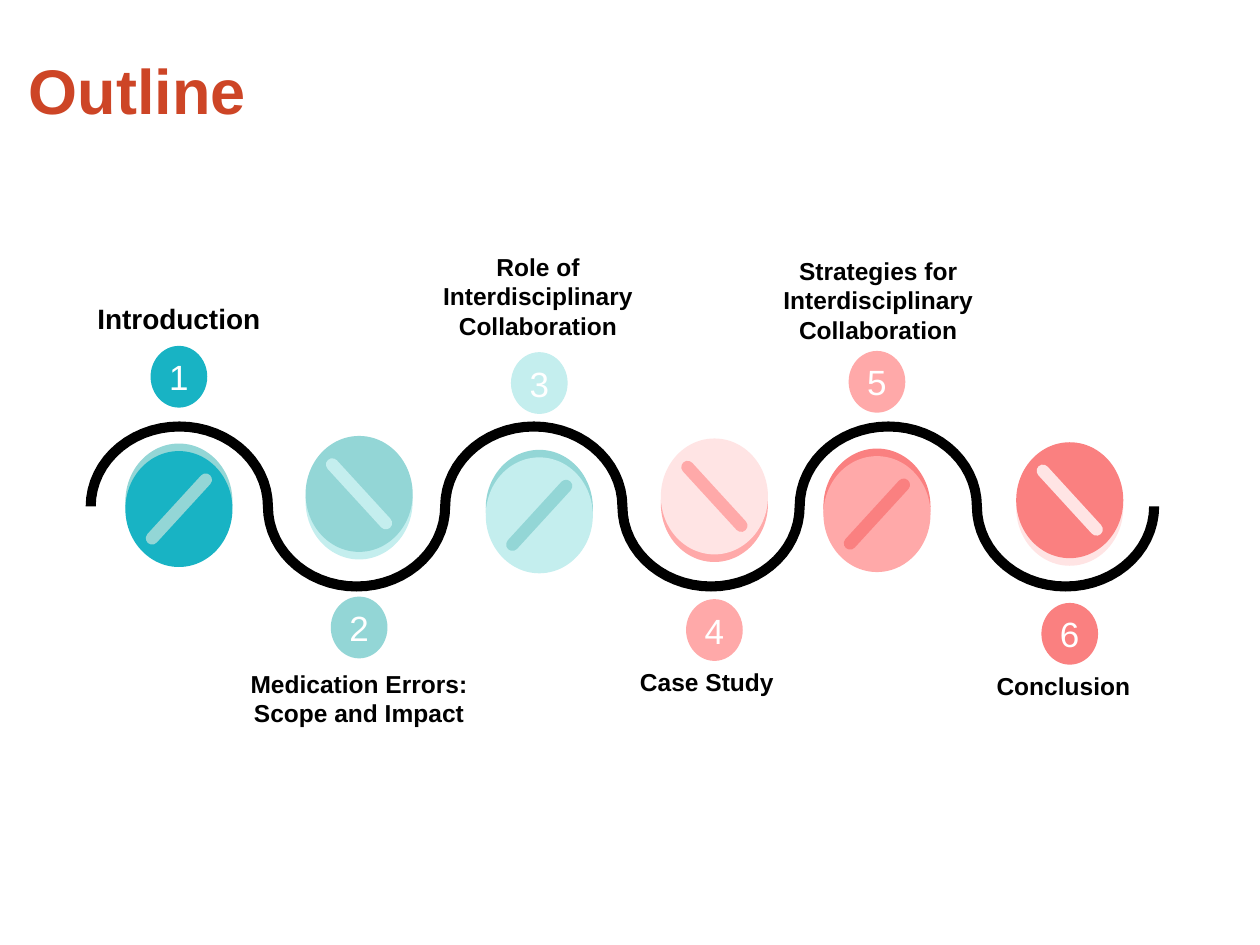
from math import cos, pi, sin

from pptx import Presentation
from pptx.dml.color import RGBColor
from pptx.enum.shapes import MSO_SHAPE
from pptx.enum.text import MSO_ANCHOR, MSO_AUTO_SIZE, PP_ALIGN
from pptx.util import Inches, Pt

COLORS = {
    "title": "CD4526",
    "black": "000000",
    "white": "FFFFFF",
    "teal": "18B3C4",
    "sea": "93D6D6",
    "mint": "C4EEEE",
    "pink": "FFA9A9",
    "blush": "FFE4E4",
    "coral": "FA8080",
}
PILL_WIDTH, PILL_HEIGHT = 0.85, 0.92
SCORE_LENGTH, SCORE_WIDTH, SCORE_ANGLE = 0.73, 0.1, 47.5
BADGE_WIDTH, BADGE_HEIGHT = 0.45, 0.49


def add_filled(kind, center_x, center_y, width, height, color):
    shape = slide.shapes.add_shape(
        kind, Inches(center_x - width / 2), Inches(center_y - height / 2),
        Inches(width), Inches(height))
    shape.shadow.inherit = False
    shape.fill.solid()
    shape.fill.fore_color.rgb = RGBColor.from_string(COLORS[color])
    shape.line.fill.background()
    return shape


def write_text(shape, text, size, color, bold, align, anchor, inset):
    text_frame = shape.text_frame
    text_frame.text = text
    text_frame.word_wrap = True
    text_frame.vertical_anchor = anchor
    text_frame.margin_left = text_frame.margin_right = Inches(inset)
    text_frame.margin_top = text_frame.margin_bottom = Inches(inset)
    paragraph = text_frame.paragraphs[0]
    paragraph.alignment = align
    font = paragraph.runs[0].font
    font.name = "Arial"
    font.size = Pt(size)
    font.bold = bold
    font.color.rgb = RGBColor.from_string(COLORS[color])


presentation = Presentation()
presentation.slide_width = Inches(10)
presentation.slide_height = Inches(7.5)
slide = presentation.slides.add_slide(presentation.slide_layouts[5])

title = slide.shapes.title
title.left, title.top = Inches(0.23), Inches(0.4)
title.width, title.height = Inches(6.64), Inches(0.62)
write_text(title, "Outline", 36, "title", True, PP_ALIGN.LEFT, MSO_ANCHOR.TOP, 0)
title.text_frame.margin_top = Inches(0.01)
title.text_frame.auto_size = MSO_AUTO_SIZE.SHAPE_TO_FIT_TEXT
title.text_frame.paragraphs[0].space_before = Pt(1)

wave_left, wave_middle, arc_count, arc_steps = 0.72, 4.02, 6, 30
arc_width, arc_height, half_stroke = 8.44 / arc_count, 0.635, 0.04
edges = []
for edge in (1, -1):
    points = []
    for arc in range(arc_count):
        side = 1 if arc % 2 == 0 else -1
        center_x = wave_left + arc_width * (arc + 0.5)
        radius_x = arc_width / 2 + side * edge * half_stroke
        radius_y = arc_height + side * edge * half_stroke
        for step in range(arc_steps + 1):
            angle = pi * step / arc_steps
            points.append((Inches(center_x - radius_x * cos(angle)),
                           Inches(wave_middle - side * radius_y * sin(angle))))
    edges.append(points)
outline = edges[0] + edges[1][::-1]
builder = slide.shapes.build_freeform(*outline[0])
builder.add_line_segments(outline[1:], close=True)
wave = builder.convert_to_shape()
wave.shadow.inherit = False
wave.fill.solid()
wave.fill.fore_color.rgb = RGBColor.from_string(COLORS["black"])
wave.line.fill.background()

steps = [
    (1.42, 4.04, 2.99, "teal", "sea", "Introduction", 16, 0.58, 2.33, 1.68),
    (2.85, 3.92, 4.98, "sea", "mint", "Medication Errors: Scope and Impact", 14, 1.83, 5.34, 2.04),
    (4.28, 4.09, 3.04, "mint", "sea", "Role of Interdisciplinary Collaboration", 14, 3.4, 2.15, 1.74),
    (5.67, 3.94, 5.0, "blush", "pink", "Case Study", 14, 4.59, 5.21, 2.04),
    (6.96, 4.08, 3.03, "pink", "coral", "Strategies for Interdisciplinary Collaboration", 14, 5.95, 2.18, 2.04),
    (8.49, 3.97, 5.03, "coral", "blush", "Conclusion", 14, 7.42, 5.24, 2.04),
]
for number, (center_x, pill_y, badge_y, front, back, label, size,
             label_left, label_top, label_width) in enumerate(steps, 1):
    side = -1 if number % 2 else 1
    add_filled(MSO_SHAPE.OVAL, center_x, pill_y + side * 0.06, PILL_WIDTH, PILL_HEIGHT, back)
    add_filled(MSO_SHAPE.OVAL, center_x, pill_y, PILL_WIDTH, PILL_HEIGHT, front)
    score = add_filled(MSO_SHAPE.ROUNDED_RECTANGLE, center_x, pill_y,
                       SCORE_LENGTH, SCORE_WIDTH, back)
    score.adjustments[0] = 0.5
    score.rotation = side * SCORE_ANGLE
    badge_color = "pink" if front == "blush" else front
    badge = add_filled(MSO_SHAPE.OVAL, center_x, badge_y, BADGE_WIDTH, BADGE_HEIGHT, badge_color)
    write_text(badge, str(number), 20, "white", False, PP_ALIGN.CENTER, MSO_ANCHOR.MIDDLE, 0)
    caption = slide.shapes.add_textbox(Inches(label_left), Inches(label_top),
                                       Inches(label_width), Inches(0.4))
    write_text(caption, label, size, "black", True, PP_ALIGN.CENTER, MSO_ANCHOR.MIDDLE, 0.1)

presentation.save("out.pptx")
